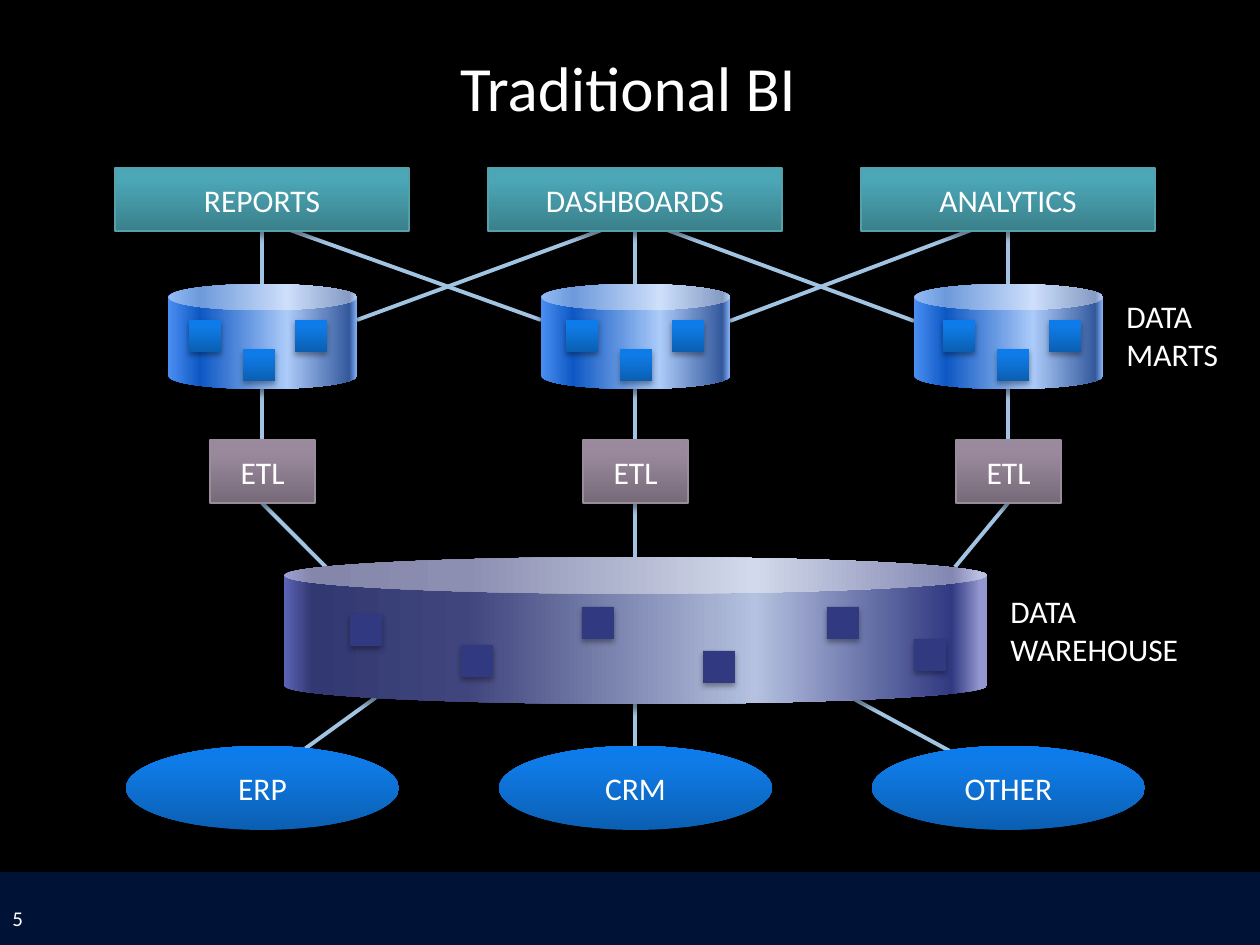
"""Build a one-slide diagram of a traditional BI architecture."""
from lxml.etree import SubElement
from pptx import Presentation
from pptx.dml.color import RGBColor
from pptx.enum.shapes import MSO_CONNECTOR, MSO_SHAPE
from pptx.enum.text import MSO_ANCHOR, PP_ALIGN
from pptx.oxml.ns import qn
from pptx.util import Pt

PX = 914400 / 126
FONT = "Calibri"
COLORS = {"background": "000000", "bar": "001236", "text": "FFFFFF", "link": "A1C4E3",
          "teal line": "56A0AC", "mauve line": "9A8C9D", "indigo": "313981", "shadow": "000000"}
GRADIENTS = {
    "teal": [(0, "3A808B"), (80, "4BA6B5"), (100, "49A8B8")],
    "mauve": [(0, "766A79"), (80, "9A899D"), (100, "9B899E")],
    "blue": [(0, "0B5FB2"), (80, "0F7BE7"), (100, "0B7CED")],
    "mart": [(0, "4A8EF2"), (17, "0E58C4"), (63, "ACCBF9"), (96, "35599D"), (100, "85B2F6")],
    "warehouse": [(0, "5C64B7"), (4, "323871"), (26, "40457D"), (67, "B5C1DF"),
                  (95, "313981"), (99, "9297CF")],
}
LARGE_SHADOW, SMALL_SHADOW = (40, 4, 3), (35, 3.1, 1.8)

OUTPUTS = ["REPORTS", "DASHBOARDS", "ANALYTICS"]
SOURCES = ["ERP", "CRM", "OTHER"]
LABELS = [(["DATA", "WAREHOUSE"], (998, 586, 194, 89)), (["DATA", "MARTS"], (1114, 291, 117, 89))]
CENTERS = [262, 635, 1008]
VERTICAL_SPANS = [(231, 284), (388, 441)]
LINKS = [(262, 220, 541, 320), (629, 220, 357, 320), (640, 220, 914, 321), (998, 220, 730, 321),
         (262, 503, 326, 567), (1008, 503, 955, 567), (635, 503, 635, 557),
         (635, 703, 635, 756), (382, 693, 295, 756), (843, 693, 959, 756)]
MART_BLOCKS = [(189, 320), (243, 349), (295, 320)]
MART_BLOCK_STEP = 377
WAREHOUSE_BLOCKS = [(350, 614), (461, 645), (582, 607), (703, 651), (827, 607), (914, 639)]
BLOCK = 32


def emu(*lengths):
    return [round(length * PX) for length in lengths]


def color(name):
    return RGBColor.from_string(COLORS[name])


def add_text(frame, lines, size, align=PP_ALIGN.LEFT):
    for index, line in enumerate(lines):
        paragraph = frame.add_paragraph() if index else frame.paragraphs[0]
        paragraph.alignment = align
        run = paragraph.add_run()
        run.text = line
        run.font.size = Pt(size)
        run.font.name = FONT
        run.font.color.rgb = color("text")


def add_text_box(slide, box, lines, size, anchor=MSO_ANCHOR.TOP, wrap=False):
    frame = slide.shapes.add_textbox(*emu(*box)).text_frame
    frame.word_wrap = wrap
    frame.vertical_anchor = anchor
    add_text(frame, lines, size)


def set_gradient(shape, stops, angle):
    shape.fill.gradient()
    shape.fill.gradient_angle = angle
    stop_list = shape._element.spPr.find(".//" + qn("a:gsLst"))
    for stop in list(stop_list):
        stop_list.remove(stop)
    for position, value in stops:
        stop = SubElement(stop_list, qn("a:gs"), pos=str(position * 1000))
        SubElement(stop, qn("a:srgbClr"), val=value)


def set_shadow(shape, opacity, blur, distance):
    effects = shape._element.spPr.find(qn("a:effectLst"))
    shadow = SubElement(effects, qn("a:outerShdw"), blurRad=str(Pt(blur)), dist=str(Pt(distance)),
                        dir="5400000", rotWithShape="0")
    tint = SubElement(shadow, qn("a:srgbClr"), val=COLORS["shadow"])
    SubElement(tint, qn("a:alpha"), val=str(opacity * 1000))


def add_block(slide, kind, box, fill, text="", line=None, angle=90, shadow=LARGE_SHADOW):
    shape = slide.shapes.add_shape(kind, *emu(*box))
    shape.shadow.inherit = False
    if fill in GRADIENTS:
        set_gradient(shape, GRADIENTS[fill], angle)
    else:
        shape.fill.solid()
        shape.fill.fore_color.rgb = color(fill)
    if line:
        shape.line.color.rgb = color(line)
        shape.line.width = Pt(0.75)
    else:
        shape.line.fill.background()
    if shadow:
        set_shadow(shape, *shadow)
    if text:
        shape.text_frame.vertical_anchor = MSO_ANCHOR.MIDDLE
        add_text(shape.text_frame, [text], 18, PP_ALIGN.CENTER)


def add_link(slide, ends):
    link = slide.shapes.add_connector(MSO_CONNECTOR.STRAIGHT, *emu(*ends))
    link.line.color.rgb = color("link")
    link.line.width = Pt(2.25)
    SubElement(link._element.spPr, qn("a:effectLst"))


def add_title(slide, text):
    title = slide.shapes.title
    title.left, title.top, title.width, title.height = emu(446, 42, 364, 89)
    title.text_frame.word_wrap = False
    title.text_frame.vertical_anchor = MSO_ANCHOR.MIDDLE
    add_text(title.text_frame, [text], 36, PP_ALIGN.CENTER)


def main():
    presentation = Presentation()
    presentation.slide_width, presentation.slide_height = emu(1260, 945)
    slide = presentation.slides.add_slide(presentation.slide_layouts[5])
    slide.background.fill.solid()
    slide.background.fill.fore_color.rgb = color("background")
    add_title(slide, "Traditional BI")
    add_block(slide, MSO_SHAPE.RECTANGLE, (0, 872, 1260, 73), "bar", shadow=None)

    verticals = [(x, top, x, bottom) for top, bottom in VERTICAL_SPANS for x in CENTERS]
    for ends in LINKS + verticals:
        add_link(slide, ends)

    add_block(slide, MSO_SHAPE.CAN, (284, 557, 703, 147), "warehouse", angle=0)
    for column, (center, output, source) in enumerate(zip(CENTERS, OUTPUTS, SOURCES)):
        add_block(slide, MSO_SHAPE.RECTANGLE, (center - 147, 168, 294, 63), "teal", output, "teal line")
        add_block(slide, MSO_SHAPE.CAN, (center - 94, 284, 189, 105), "mart", angle=0)
        add_block(slide, MSO_SHAPE.RECTANGLE, (center - 52, 440, 105, 63), "mauve", "ETL", "mauve line")
        add_block(slide, MSO_SHAPE.OVAL, (center - 136, 746, 273, 84), "blue", source)
        for x, y in MART_BLOCKS:
            box = (x + column * MART_BLOCK_STEP, y, BLOCK, BLOCK)
            add_block(slide, MSO_SHAPE.RECTANGLE, box, "blue", shadow=SMALL_SHADOW)
    for x, y in WAREHOUSE_BLOCKS:
        add_block(slide, MSO_SHAPE.RECTANGLE, (x, y, BLOCK, BLOCK), "indigo", shadow=SMALL_SHADOW)

    for lines, box in LABELS:
        add_text_box(slide, box, lines, 18)
    add_text_box(slide, (0, 893, 294, 50), ["5"], 12, MSO_ANCHOR.MIDDLE, True)
    presentation.save("out.pptx")


if __name__ == "__main__":
    main()
